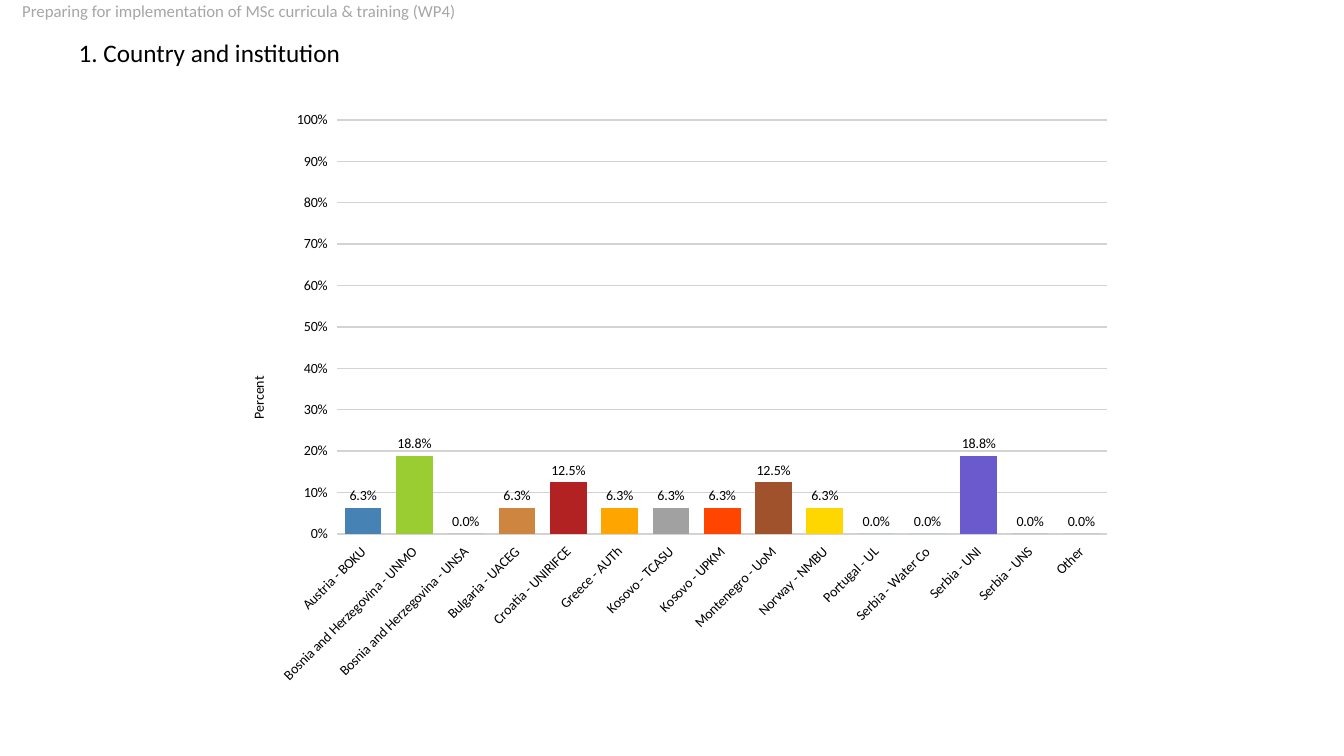
"""Build the slide showing the share of answers by country and institution."""
import dataclasses
import typing

import pptx
import pptx.chart.data
import pptx.dml.color
import pptx.enum.chart
import pptx.enum.text
import pptx.oxml
import pptx.oxml.ns
import pptx.util

WIDTH = pptx.util.Inches(13.33)
HEIGHT = pptx.util.Inches(7.5)


@dataclasses.dataclass(frozen=True)
class Theme:
    """Font, colours and type sizes of the slide."""
    font: str = "Calibri"
    text: str = "000000"
    muted: str = "A6A6A6"
    grid: str = "D3D3D3"
    title_size: int = 18
    header_size: int = 12
    chart_size: int = 10


class Box(typing.NamedTuple):
    """A rectangle in shares of the slide's size."""
    left: float
    top: float
    width: float
    height: float

    def lengths(self) -> tuple[int, int, int, int]:
        """Return left, top, width and height as slide lengths."""
        return (int(self.left * WIDTH), int(self.top * HEIGHT),
                int(self.width * WIDTH), int(self.height * HEIGHT))


class Institution(typing.NamedTuple):
    """One column of the chart."""
    name: str
    share: float
    color: str


THEME = Theme()
HEADER_BOX = Box(0, 0, 1, 0.033)
TITLE_BOX = Box(0.051, 0.032, 0.9, 0.08)
CHART_BOX = Box(0.1635, 0.132, 0.6737, 0.788)
INSTITUTIONS = (
    Institution("Austria - BOKU", 0.063, "4682B4"),
    Institution("Bosnia and Herzegovina - UNMO", 0.188, "9ACD32"),
    Institution("Bosnia and Herzegovina - UNSA", 0, "708090"),
    Institution("Bulgaria - UACEG", 0.063, "CD853F"),
    Institution("Croatia - UNIRIFCE", 0.125, "B22222"),
    Institution("Greece - AUTh", 0.063, "FFA500"),
    Institution("Kosovo - TCASU", 0.063, "A1A1A1"),
    Institution("Kosovo - UPKM", 0.063, "FF4500"),
    Institution("Montenegro - UoM", 0.125, "A0522D"),
    Institution("Norway - NMBU", 0.063, "FFD700"),
    Institution("Portugal - UL", 0, "3CB371"),
    Institution("Serbia - Water Co", 0, "54A9DD"),
    Institution("Serbia - UNI", 0.188, "6A5ACD"),
    Institution("Serbia - UNS", 0, "4169E1"),
    Institution("Other", 0, "9370DB"),
)


def rgb(color: str) -> pptx.dml.color.RGBColor:
    """Turn a hexadecimal colour into a colour object."""
    return pptx.dml.color.RGBColor.from_string(color)


def format_font(font: typing.Any, size: float, color: str) -> None:
    """Apply the theme's font at the given size and colour."""
    font.name = THEME.font
    font.size = pptx.util.Pt(size)
    font.bold = False
    font.color.rgb = rgb(color)


def write_text(frame: typing.Any, text: str, *, size: float, color: str = THEME.text,
               spacing: float | None = None, indent: float = 0.1) -> None:
    """Write one left-aligned, vertically centred paragraph."""
    frame.word_wrap = True
    frame.vertical_anchor = pptx.enum.text.MSO_ANCHOR.MIDDLE
    frame.margin_left = pptx.util.Inches(indent)
    paragraph = frame.paragraphs[0]
    paragraph.alignment = pptx.enum.text.PP_ALIGN.LEFT
    paragraph.line_spacing = spacing
    run = paragraph.add_run()
    run.text = text
    format_font(run.font, size, color)


def set_layout(parent: typing.Any, index: int, **shares: float) -> None:
    """Place a chart part by shares of the chart's size."""
    for layout in parent.findall(pptx.oxml.ns.qn("c:layout")):
        parent.remove(layout)
    target = '<c:layoutTarget val="inner"/>' if "w" in shares else ""
    modes = "".join(f'<c:{key}Mode val="edge"/>' for key in "xy")
    values = "".join(f'<c:{key} val="{share}"/>' for key, share in shares.items())
    parent.insert(index, pptx.oxml.parse_xml(
        f'<c:layout {pptx.oxml.ns.nsdecls("c")}><c:manualLayout>'
        f'{target}{modes}{values}</c:manualLayout></c:layout>'))


def rotate_text(element: typing.Any, degrees: int) -> None:
    """Rotate the text held by a chart element."""
    body = next(element.iter(pptx.oxml.ns.qn("a:bodyPr")))
    body.set("rot", str(degrees * 60000))
    body.set("vert", "horz")


def format_axes(chart: typing.Any) -> None:
    """Format both axes, the grid and the axis title."""
    for axis in (chart.category_axis, chart.value_axis):
        format_font(axis.tick_labels.font, THEME.chart_size, THEME.text)
        axis.format.line.fill.background()
        axis.major_tick_mark = pptx.enum.chart.XL_TICK_MARK.CROSS
    labels = chart.category_axis._element.find(pptx.oxml.ns.qn("c:txPr"))
    rotate_text(labels, -45)
    axis = chart.value_axis
    axis.minimum_scale, axis.maximum_scale, axis.major_unit = 0, 1, 0.1
    axis.tick_labels.number_format = "0%"
    axis.tick_labels.number_format_is_linked = False
    axis.major_gridlines.format.line.color.rgb = rgb(THEME.grid)
    axis.major_gridlines.format.line.width = pptx.util.Pt(1)
    run = axis.axis_title.text_frame.paragraphs[0].add_run()
    run.text = "Percent"
    format_font(run.font, THEME.chart_size, THEME.text)
    title = axis.axis_title._element
    rotate_text(title, -90)
    set_layout(title, 1, x=0.03, y=0.46)


def add_share_chart(slide: typing.Any) -> None:
    """Add the column chart of shares by institution."""
    data = pptx.chart.data.CategoryChartData(number_format="0.0%")
    data.categories = [institution.name for institution in INSTITUTIONS]
    data.add_series("Series 1", [institution.share for institution in INSTITUTIONS])
    chart = slide.shapes.add_chart(
        pptx.enum.chart.XL_CHART_TYPE.COLUMN_CLUSTERED, *CHART_BOX.lengths(), data).chart
    chart.has_title = False
    chart.has_legend = False
    format_font(chart.font, THEME.title_size, THEME.text)
    format_axes(chart)
    plot = chart.plots[0]
    plot.gap_width = 40
    plot.vary_by_categories = False
    for index, institution in enumerate(INSTITUTIONS):
        point = plot.series[0].points[index]
        point.format.fill.solid()
        point.format.fill.fore_color.rgb = rgb(institution.color)
        point.format.line.fill.background()
    labels = plot.series[0].data_labels
    labels.show_value = True
    labels.number_format = "0.0%"
    labels.number_format_is_linked = False
    labels.position = pptx.enum.chart.XL_LABEL_POSITION.OUTSIDE_END
    format_font(labels.font, THEME.chart_size, THEME.text)
    plot_area = next(chart._chartSpace.iter(pptx.oxml.ns.qn("c:plotArea")))
    set_layout(plot_area, 0, x=0.13, y=0.034, w=0.85, h=0.695)


def main() -> None:
    """Build and save the presentation."""
    presentation = pptx.Presentation()
    presentation.slide_width, presentation.slide_height = WIDTH, HEIGHT
    slide = presentation.slides.add_slide(presentation.slide_layouts[5])
    title = slide.shapes.title
    title.left, title.top, title.width, title.height = TITLE_BOX.lengths()
    write_text(title.text_frame, "1. Country and institution",
               size=THEME.title_size, spacing=0.9)
    header = slide.shapes.add_textbox(*HEADER_BOX.lengths())
    write_text(header.text_frame,
               "Preparing for implementation of MSc curricula & training (WP4)",
               size=THEME.header_size, color=THEME.muted, spacing=0.9, indent=0.22)
    add_share_chart(slide)
    presentation.save("out.pptx")


if __name__ == "__main__":
    main()
